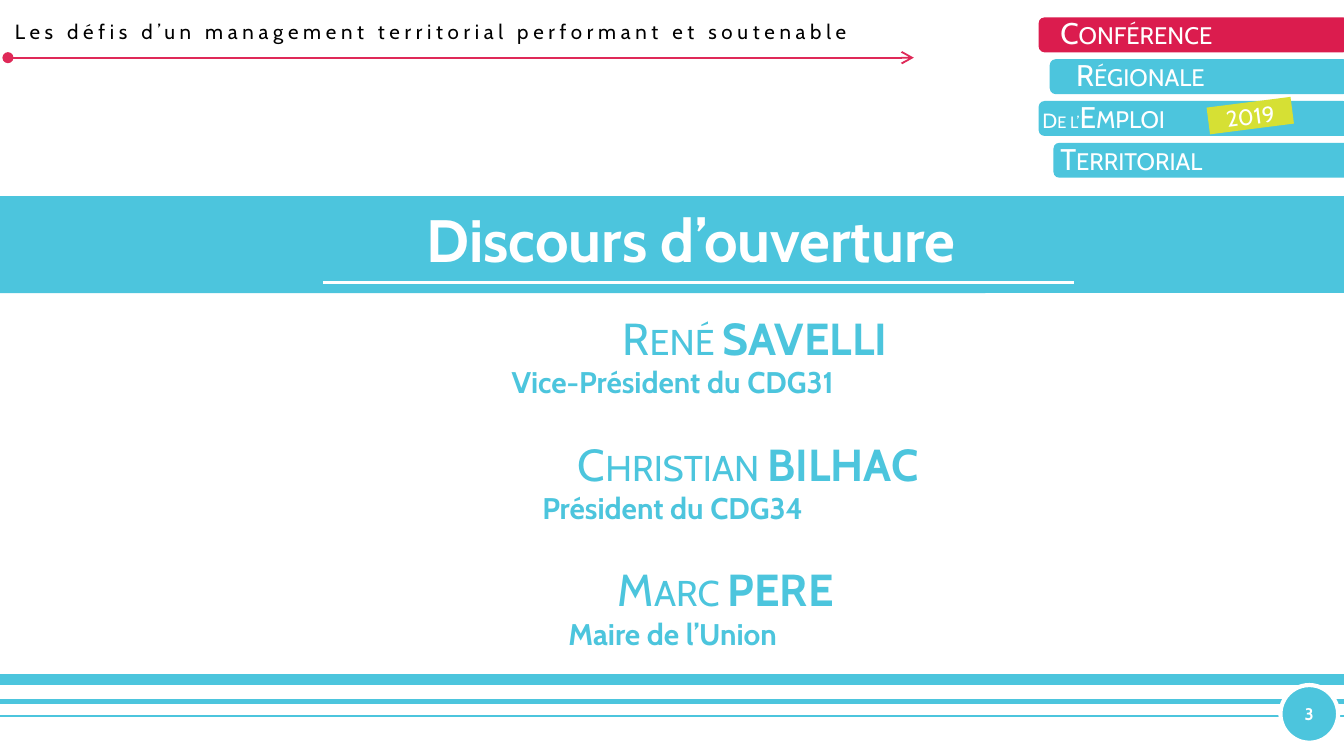
import pptx
import pptx.dml.color
import pptx.enum.shapes
import pptx.enum.text
import pptx.oxml
import pptx.util
from pptx.util import Cm

FONT = "Cabin"
BLUE, RED, PINK, LIME = "4CC5DD", "DB1C4E", "DF2958", "D6E034"
WHITE, BLACK = "FFFFFF", "000000"
SHAPES = pptx.enum.shapes.MSO_SHAPE
CENTER = pptx.enum.text.PP_ALIGN.CENTER


def colour(value):
    """Return the colour for a hex string."""
    return pptx.dml.color.RGBColor.from_string(value)


def append_effect(parent, tag, **attributes):
    """Append an empty drawing element with attributes to a parent."""
    element = parent.makeelement(pptx.oxml.ns.qn(tag), attributes)
    parent.append(element)


def add_run(paragraph, text, size=16, color=WHITE, bold=False, small_caps=False, spacing=0):
    """Add formatted text to a paragraph."""
    run = paragraph.add_run()
    run.text = text
    run.font.name = FONT
    run.font.size = pptx.util.Pt(size)
    run.font.bold = bold
    run.font.color.rgb = colour(color)
    properties = run.font._element
    if small_caps:
        properties.set("cap", "small")
    if spacing:
        properties.set("spc", str(int(spacing * 100)))


def add_text_frame(slide, left, top, width, height):
    """Add a wrapping text box and return its text frame."""
    box = slide.shapes.add_textbox(Cm(left), Cm(top), Cm(width), Cm(height))
    box.text_frame.word_wrap = True
    return box.text_frame


def add_block(slide, kind, left, top, width, height, fill):
    """Add a flat filled shape without an outline."""
    shape = slide.shapes.add_shape(kind, Cm(left), Cm(top), Cm(width), Cm(height))
    shape.shadow.inherit = False
    shape.fill.solid()
    shape.fill.fore_color.rgb = colour(fill)
    shape.line.fill.background()
    return shape


def add_rule(slide, left, right, y, color, weight, arrow=False):
    """Add a horizontal line, with a dot and an arrowhead if asked."""
    rule = slide.shapes.add_connector(
        pptx.enum.shapes.MSO_CONNECTOR.STRAIGHT, Cm(left), Cm(y), Cm(right), Cm(y))
    rule.line.color.rgb = colour(color)
    rule.line.width = pptx.util.Pt(weight)
    if arrow:
        line = rule.line._get_or_add_ln()
        append_effect(line, "a:headEnd", type="oval")
        append_effect(line, "a:tailEnd", type="arrow")
    append_effect(rule._element.spPr, "a:effectLst")


def add_tagline(slide, left, top, width):
    """Place the spaced tagline above its arrow."""
    add_rule(slide, left + 0.12, left + width - 1.05, top + 0.86, PINK, 1, arrow=True)
    frame = add_text_frame(slide, left, top, width, 0.74)
    add_run(frame.paragraphs[0],
            "Les défis d’un management territorial performant et soutenable",
            size=11, color=BLACK, spacing=2.5)


def add_title_band(slide, left, top, width, height):
    """Place the title and its underline on a band."""
    band = add_block(slide, SHAPES.ROUNDED_RECTANGLE, left, top, width, height, BLUE)
    band.adjustments[0] = 0.08
    frame = add_text_frame(slide, left + 4.6, top, 18.34, 1.63)
    frame.paragraphs[0].alignment = CENTER
    add_run(frame.paragraphs[0], "Discours d’ouverture", size=32, bold=True)
    add_rule(slide, left + 6.81, left + 21, top + 1.63, WHITE, 1.5)


def add_speakers(slide, left, top, width, height):
    """List the speakers, each with a role."""
    speakers = [
        ("René ", "SAVELLI", "Vice-Président du CDG31"),
        ("Christian ", "BILHAC", "Président du CDG34"),
        ("Marc ", "PERE", "Maire de l’Union"),
    ]
    frame = add_text_frame(slide, left, top, width, height)
    for index, (first_name, surname, role) in enumerate(speakers):
        name = frame.add_paragraph() if index else frame.paragraphs[0]
        name.space_before = pptx.util.Pt(19.5 if index else 0)
        add_run(name, first_name, size=24, color=BLUE, small_caps=True)
        add_run(name, surname, size=24, color=BLUE, bold=True, small_caps=True)
        position = frame.add_paragraph()
        add_run(position, role, color=BLUE, bold=True)
        name.alignment = position.alignment = CENTER


def add_footer(slide, left, top, width):
    """Place the three thinning rules and the page number."""
    for offset, weight in ((0, 6), (0.41, 2.25), (0.69, 1)):
        add_rule(slide, left, left + width, top + offset, BLUE, weight)
    badge = add_block(slide, SHAPES.OVAL, left + width - 1.2, top + 0.1, 1.09, 1.09, BLUE)
    badge.line.color.rgb = colour(WHITE)
    badge.line.width = pptx.util.Pt(2.25)
    fill_label(badge, "3", size=9, bold=True)


def fill_label(shape, text, **text_format):
    """Centre text in a shape without margins."""
    frame = shape.text_frame
    frame.margin_left = frame.margin_right = frame.margin_top = frame.margin_bottom = 0
    frame.vertical_anchor = pptx.enum.text.MSO_ANCHOR.MIDDLE
    frame.paragraphs[0].alignment = CENTER
    add_run(frame.paragraphs[0], text, **text_format)


def add_event_banner(slide, left, top, width):
    """Stack the event name on bars, with the year as a tag."""
    rows = [
        (0, 0.16, 3.51, RED, [("Conférence", 16)]),
        (0.21, 0.46, 3.2, BLUE, [("Régionale", 16)]),
        (0, -0.25, 4.93, BLUE, [(" De l’", 11), ("Emploi", 16)]),
        (0.28, 0.16, 3.71, BLUE, [("Territorial", 16)]),
    ]
    for index, (bar_offset, text_offset, text_width, fill, parts) in enumerate(rows):
        y = top + index * 0.79
        add_block(slide, SHAPES.ROUNDED_RECTANGLE, left + bar_offset, y,
                  width - bar_offset, 0.66, fill)
        frame = add_text_frame(slide, left + text_offset, y - 0.17, text_width, 0.94)
        for text, size in parts:
            add_run(frame.paragraphs[0], text, size=size, small_caps=True)
    tag = add_block(slide, SHAPES.RECTANGLE, left + 3.2, top + 1.6, 1.6, 0.51, LIME)
    tag.rotation = -7.3
    fill_label(tag, "2019", size=12)


def main():
    """Build and save the slide."""
    presentation = pptx.Presentation()
    presentation.slide_width, presentation.slide_height = Cm(25.4), Cm(14.29)
    slide = presentation.slides.add_slide(presentation.slide_layouts[6])
    add_title_band(slide, -0.71, 3.71, 27, 1.83)
    add_speakers(slide, 2.72, 5.74, 19.99, 8.46)
    add_tagline(slide, 0.03, 0.23, 18.29)
    add_footer(slide, 0, 12.85, 25.4)
    add_event_banner(slide, 19.63, 0.33, 5.87)
    presentation.save("out.pptx")


if __name__ == "__main__":
    main()
